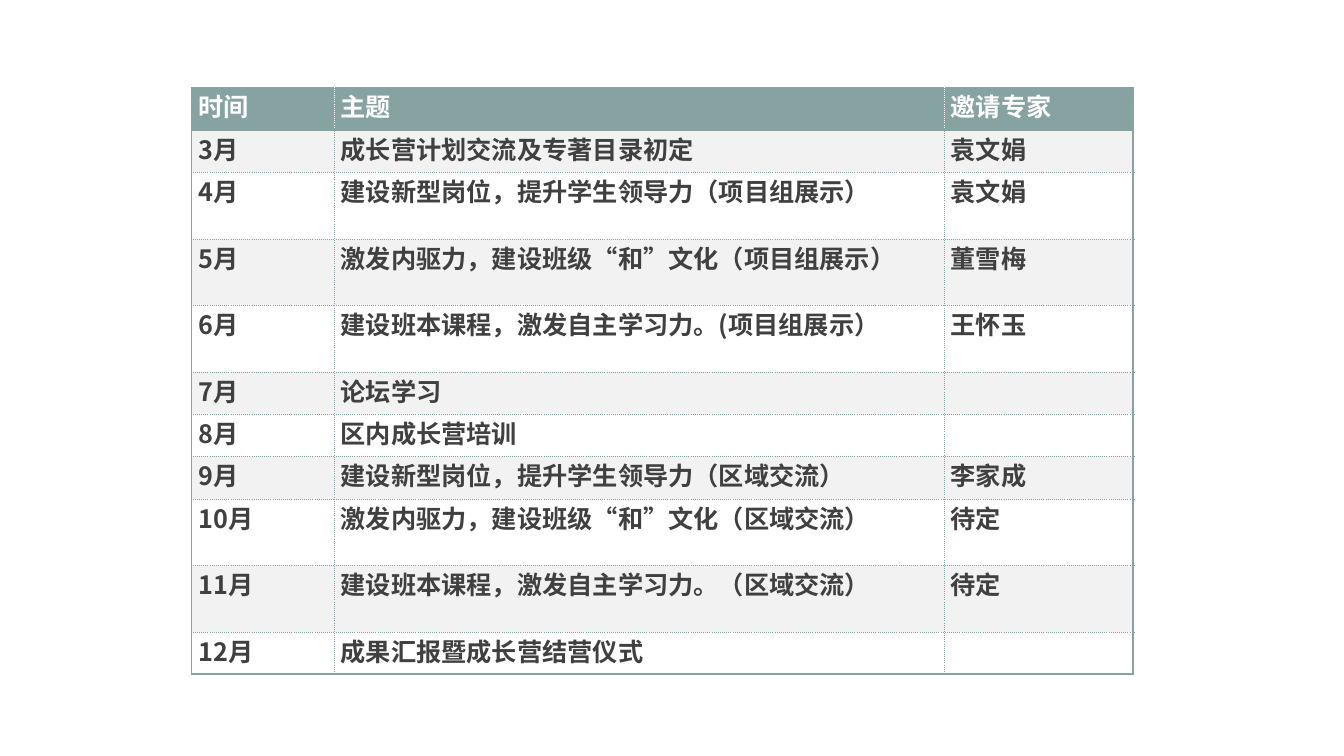
from dataclasses import dataclass

from lxml import etree
from pptx import Presentation
from pptx.dml.color import RGBColor
from pptx.oxml.ns import qn
from pptx.table import Table, _Cell
from pptx.util import Inches, Pt

FONT = "Noto Sans CJK SC"
TEAL, WHITE, GRAY, DARK = "86A3A1", "FFFFFF", "F2F2F2", "404040"
WIDTHS = (1.41, 6.05, 1.88)
LOW, TALL = 0.42, 0.66


@dataclass
class Line:
    color: str
    width: float
    dash: str


@dataclass
class Entry:
    month: str
    topic: str
    guest: str = ""
    height: float = LOW


SOLID = Line(TEAL, 1.5, "solid")
DOTS = Line(TEAL, 0.25, "dot")
PALE = Line(WHITE, 0.25, "dot")

ENTRIES = [
    Entry("时间", "主题", "邀请专家"),
    Entry("3月", "成长营计划交流及专著目录初定", "袁文娟"),
    Entry("4月", "建设新型岗位，提升学生领导力（项目组展示）", "袁文娟", TALL),
    Entry("5月", "激发内驱力，建设班级“和”文化（项目组展示）", "董雪梅", TALL),
    Entry("6月", "建设班本课程，激发自主学习力。(项目组展示）", "王怀玉", TALL),
    Entry("7月", "论坛学习"),
    Entry("8月", "区内成长营培训"),
    Entry("9月", "建设新型岗位，提升学生领导力（区域交流）", "李家成"),
    Entry("10月", "激发内驱力，建设班级“和”文化（区域交流）", "待定", TALL),
    Entry("11月", "建设班本课程，激发自主学习力。（区域交流）", "待定", TALL),
    Entry("12月", "成果汇报暨成长营结营仪式"),
]


def rgb(color: str) -> RGBColor:
    return RGBColor.from_string(color)


def add_edge(cell: _Cell, side: str, line: Line) -> None:
    props = cell._tc.get_or_add_tcPr()
    edge = etree.SubElement(props, qn(f"a:ln{side}"), w=str(Pt(line.width)))
    fill = etree.SubElement(edge, qn("a:solidFill"))
    etree.SubElement(fill, qn("a:srgbClr"), val=line.color)
    etree.SubElement(edge, qn("a:prstDash"), val=line.dash)


def set_text(cell: _Cell, text: str, color: str) -> None:
    cell.margin_left = cell.margin_right = Inches(0.07)
    cell.margin_top = cell.margin_bottom = 0
    if not text:
        return
    cell.text_frame.text = text
    run = cell.text_frame.paragraphs[0].runs[0]
    run.font.name = FONT
    run.font.size = Pt(18)
    run.font.bold = True
    run.font.color.rgb = rgb(color)
    # East Asian typeface
    etree.SubElement(run._r.get_or_add_rPr(), qn("a:ea"), typeface=FONT)


def draw_cell(table: Table, row: int, col: int, text: str) -> None:
    cell = table.cell(row, col)
    head = row == 0
    set_text(cell, text, WHITE if head else DARK)

    # Solid frame around the header and body, dotted lines inside
    inner = PALE if head else DOTS
    last = len(ENTRIES) - 1
    add_edge(cell, "L", SOLID if col == 0 else inner)
    add_edge(cell, "R", SOLID if col == len(WIDTHS) - 1 else inner)
    add_edge(cell, "T", SOLID if row <= 1 else DOTS)
    add_edge(cell, "B", SOLID if row in (0, last) else DOTS)

    cell.fill.solid()
    cell.fill.fore_color.rgb = rgb(TEAL if head else GRAY if row % 2 else WHITE)


def main() -> None:
    deck = Presentation()
    deck.slide_width, deck.slide_height = Inches(13.33), Inches(7.5)
    slide = deck.slides.add_slide(deck.slide_layouts[6])

    # Schedule table
    total = sum(entry.height for entry in ENTRIES)
    frame = slide.shapes.add_table(
        len(ENTRIES), len(WIDTHS),
        Inches(1.9), Inches(0.87), Inches(sum(WIDTHS)), Inches(total))
    table = frame.table
    table.horz_banding = False
    for col, width in enumerate(WIDTHS):
        table.columns[col].width = Inches(width)
    for row, entry in enumerate(ENTRIES):
        table.rows[row].height = Inches(entry.height)
        for col, text in enumerate((entry.month, entry.topic, entry.guest)):
            draw_cell(table, row, col, text)

    deck.save("out.pptx")


if __name__ == "__main__":
    main()
